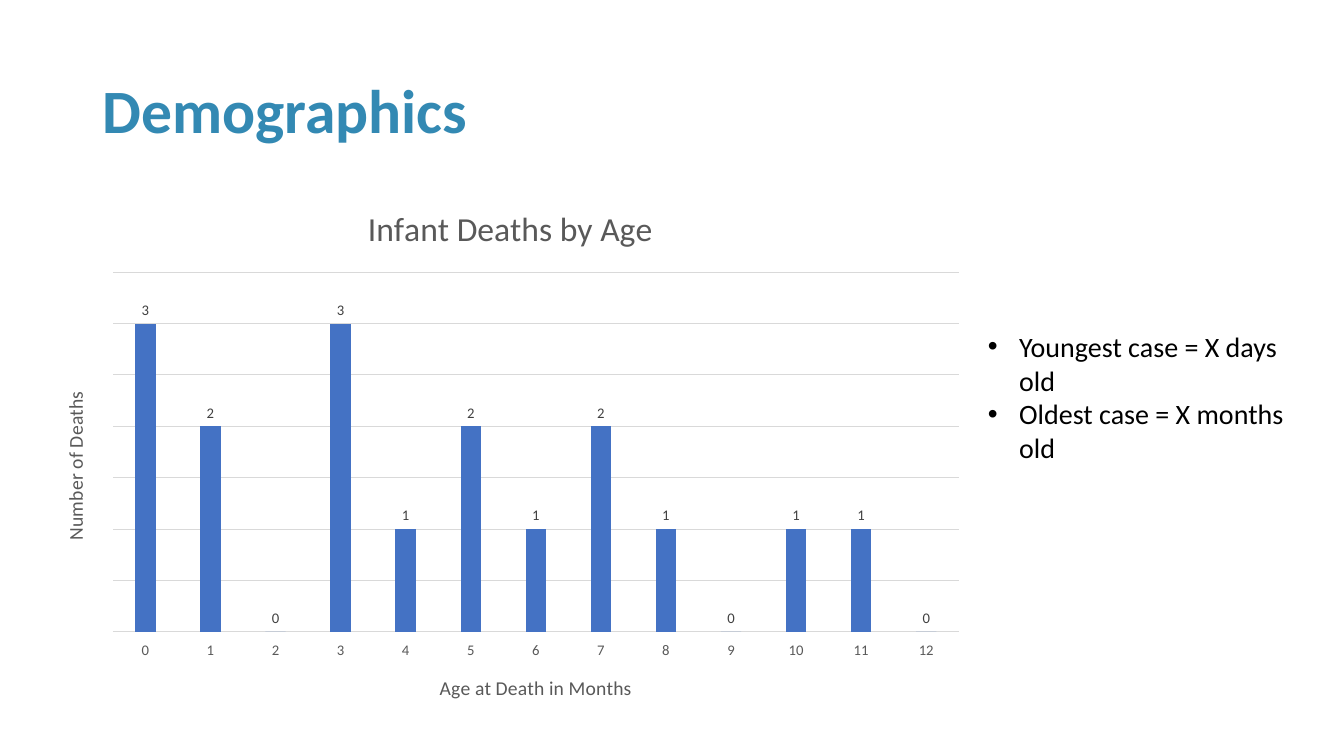
"""Build the Demographics slide with its chart of infant deaths by age."""
from dataclasses import dataclass

from lxml.etree import SubElement
from pptx import Presentation
from pptx.chart.data import CategoryChartData as ChartData
from pptx.dml.color import RGBColor as Color
from pptx.enum.chart import XL_CHART_TYPE as Kind
from pptx.enum.chart import XL_LABEL_POSITION as Spot
from pptx.enum.chart import XL_TICK_LABEL_POSITION as Place
from pptx.enum.chart import XL_TICK_MARK as Tick
from pptx.enum.text import MSO_ANCHOR as Anchor
from pptx.oxml import parse_xml
from pptx.oxml.ns import nsdecls, qn
from pptx.util import Emu, Pt

SCALE = 9144


@dataclass(frozen=True)
class Theme:
    """Colours and type sizes of the slide."""
    font: str = "Calibri"
    blue: str = "3389B3"
    bar: str = "4472C4"
    black: str = "000000"
    dark: str = "404040"
    grey: str = "595959"
    grid: str = "D9D9D9"
    head: float = 44
    title: float = 24
    body: float = 20
    axis: float = 14
    small: float = 10.5
    rule: float = 0.75


@dataclass(frozen=True)
class Box:
    """A place on the slide in px."""
    left: int
    top: int
    width: int
    height: int

    def emu(self) -> list[Emu]:
        """Return the four lengths in EMU."""
        return [px(n) for n in (self.left, self.top, self.width, self.height)]


@dataclass(frozen=True)
class Note:
    """A text box with its style."""
    box: Box
    lines: tuple[str, ...]
    size: float
    color: str
    bold: bool = False
    anchor: Anchor = Anchor.TOP
    space: float = 1.0
    indent: int = 0


THEME = Theme()
CHART = Box(41, 183, 930, 527)
PLOT = Box(112, 270, 839, 357)
DEATHS = (3, 2, 0, 3, 1, 2, 1, 2, 1, 0, 1, 1, 0)
NOTES = (
    Note(Box(92, 40, 1150, 145), ("Demographics",), THEME.head, THEME.blue,
         bold=True, anchor=Anchor.MIDDLE, space=0.9),
    Note(Box(970, 322, 337, 145),
         ("Youngest case = X days old", "Oldest case = X months old"),
         THEME.body, THEME.black, indent=31),
)


def px(count: int) -> Emu:
    """Turn px into EMU."""
    return Emu(count * SCALE)


def style(font, size: float, color: str, bold: bool = False) -> None:
    """Set the face, size, weight and colour of a font."""
    font.name, font.size, font.bold = THEME.font, Pt(size), bold
    font.color.rgb = Color.from_string(color)


def rule(line) -> None:
    """Give a line the grid colour and width."""
    line.color.rgb = Color.from_string(THEME.grid)
    line.width = Pt(THEME.rule)


def draw_note(slide, note: Note) -> None:
    """Draw a text box, with bullets where it is indented."""
    frame = slide.shapes.add_textbox(*note.box.emu()).text_frame
    frame.word_wrap = True
    frame.vertical_anchor = note.anchor
    frame.text = "\n".join(note.lines)
    for para in frame.paragraphs:
        para.line_spacing = note.space
        for run in para.runs:
            style(run.font, note.size, note.color, note.bold)
        if note.indent:
            props = para._p.get_or_add_pPr()
            props.set("marL", str(px(note.indent)))
            props.set("indent", str(-px(note.indent)))
            SubElement(props, qn("a:buFont"), typeface="Arial")
            SubElement(props, qn("a:buChar"), char="•")


def set_title(owner, text: str, size: float) -> None:
    """Write the title of a chart or an axis."""
    frame = owner.text_frame
    frame.text = text
    style(frame.paragraphs[0].runs[0].font, size, THEME.grey)


def place_plot(chart, outer: Box, inner: Box) -> None:
    """Fix the inner plot area within the chart."""
    parts = {
        "x": (inner.left - outer.left) / outer.width,
        "y": (inner.top - outer.top) / outer.height,
        "w": inner.width / outer.width,
        "h": inner.height / outer.height,
    }
    modes = "".join(f'<c:{key}Mode val="edge"/>' for key in "xy")
    sizes = "".join(f'<c:{key} val="{val:.4f}"/>' for key, val in parts.items())
    area = chart._chartSpace.chart.plotArea
    for old in area.findall(qn("c:layout")):
        area.remove(old)
    area.insert(0, parse_xml(
        f'<c:layout {nsdecls("c")}><c:manualLayout><c:layoutTarget val="inner"/>'
        f'{modes}{sizes}</c:manualLayout></c:layout>'))


def draw_chart(slide) -> None:
    """Draw the column chart of deaths by month."""
    data = ChartData()
    data.categories = [str(month) for month in range(len(DEATHS))]
    data.add_series("Series 1", DEATHS)
    chart = slide.shapes.add_chart(
        Kind.COLUMN_CLUSTERED, *CHART.emu(), data).chart
    style(chart.font, THEME.small, THEME.black)
    chart.has_legend = False
    set_title(chart.chart_title, "Infant Deaths by Age", THEME.title)
    chart.chart_title.include_in_layout = False
    place_plot(chart, CHART, PLOT)

    months = chart.category_axis
    set_title(months.axis_title, "Age at Death in Months", THEME.axis)
    months.major_tick_mark = months.minor_tick_mark = Tick.NONE
    months.tick_label_position = Place.LOW
    style(months.tick_labels.font, THEME.small, THEME.grey)
    rule(months.format.line)

    count = chart.value_axis
    set_title(count.axis_title, "Number of Deaths", THEME.axis)
    count.minimum_scale, count.maximum_scale, count.major_unit = 0, 3.5, 0.5
    count.has_major_gridlines = True
    rule(count.major_gridlines.format.line)
    count.visible = False

    plot = chart.plots[0]
    plot.gap_width, plot.overlap, plot.vary_by_categories = 219, -27, False
    fill = plot.series[0].format.fill
    fill.solid()
    fill.fore_color.rgb = Color.from_string(THEME.bar)
    plot.has_data_labels = True
    labels = plot.data_labels
    labels.show_value, labels.position = True, Spot.OUTSIDE_END
    style(labels.font, THEME.small, THEME.dark)


def main() -> None:
    """Build and save the slide."""
    deck = Presentation()
    deck.slide_width, deck.slide_height = px(1333), px(750)
    slide = deck.slides.add_slide(deck.slide_layouts[6])
    draw_chart(slide)
    for note in NOTES:
        draw_note(slide, note)
    deck.save("out.pptx")


if __name__ == "__main__":
    main()
